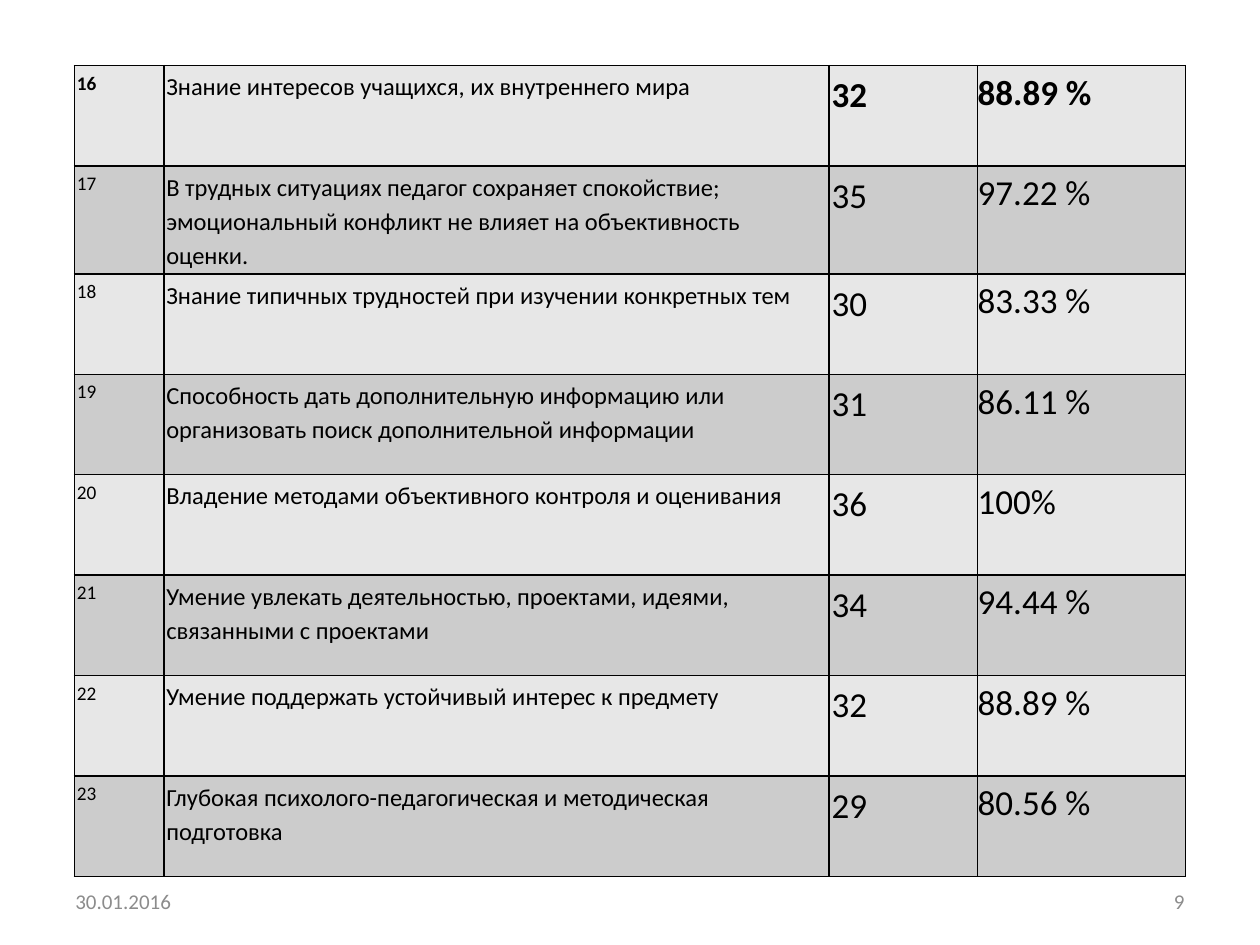
from pptx import Presentation, util as u
from pptx.dml.color import RGBColor
from pptx.enum import text
from pptx.oxml import parse_xml
from pptx.oxml.ns import nsdecls

BLACK = RGBColor(0x00, 0x00, 0x00)
GREY = RGBColor(0x8C, 0x8C, 0x8C)
BANDS = (RGBColor(0xE7, 0xE7, 0xE7), RGBColor(0xCC, 0xCC, 0xCC))
FONT = "Calibri"

COLS = (0.71, 5.28, 1.18, 1.65)
SIZES = (11, 14, 20, 20)
PADS = (0.02, 0.02, 0.02, 0)
ROWS = (
    ("16", "Знание интересов учащихся, их внутреннего мира", "32", "88.89 %"),
    ("17", "В трудных ситуациях педагог сохраняет спокойствие; "
           "эмоциональный конфликт не влияет на объективность оценки.",
     "35", "97.22 %"),
    ("18", "Знание типичных трудностей при изучении конкретных тем",
     "30", "83.33 %"),
    ("19", "Способность дать дополнительную информацию или "
           "организовать поиск дополнительной информации", "31", "86.11 %"),
    ("20", "Владение методами объективного контроля и оценивания",
     "36", "100%"),
    ("21", "Умение увлекать деятельностью, проектами, идеями, "
           "связанными с проектами", "34", "94.44 %"),
    ("22", "Умение поддержать устойчивый интерес к предмету",
     "32", "88.89 %"),
    ("23", "Глубокая психолого-педагогическая и методическая подготовка",
     "29", "80.56 %"),
)


def add_run(para, words, size, color, bold=False):
    run = para.add_run()
    run.text = words
    font = run.font
    font.name, font.size, font.bold = FONT, u.Pt(size), bold
    font.color.rgb = color


def set_edges(cell):
    props = cell._tc.get_or_add_tcPr()
    for spot, side in enumerate(("lnL", "lnR", "lnT", "lnB")):
        props.insert(spot, parse_xml(
            f'<a:{side} {nsdecls("a")} w="12700"><a:solidFill>'
            f'<a:srgbClr val="{BLACK}"/></a:solidFill></a:{side}>'))


def fill_cell(cell, words, size, pad, band, bold):
    cell.fill.solid()
    cell.fill.fore_color.rgb = band
    cell.margin_left = cell.margin_right = u.Inches(pad)
    cell.margin_top = cell.margin_bottom = u.Inches(pad)
    para = cell.text_frame.paragraphs[0]
    para.line_spacing = 1.15
    para.space_after = u.Pt(10)
    add_run(para, words, size, BLACK, bold)
    set_edges(cell)


def add_scores(slide, left, top, width, height):
    table = slide.shapes.add_table(
        len(ROWS), len(COLS), u.Inches(left), u.Inches(top),
        u.Inches(width), u.Inches(height)).table
    table.first_row = False
    table.horz_banding = False
    for col, wide in zip(table.columns, COLS):
        col.width = u.Inches(wide)
    for r, row in enumerate(ROWS):
        table.rows[r].height = u.Inches(height / len(ROWS))
        for c, words in enumerate(row):
            # The first row is bold, except for its wording
            fill_cell(table.cell(r, c), words, SIZES[c], PADS[c],
                      BANDS[r % 2], r == 0 and c != 1)


def add_footer(slide, left, top, width, height):
    wide = 2.33
    notes = (("30.01.2016", left, text.PP_ALIGN.LEFT),
             ("9", left + width - wide, text.PP_ALIGN.RIGHT))
    for words, x, align in notes:
        frame = slide.shapes.add_textbox(
            u.Inches(x), u.Inches(top), u.Inches(wide),
            u.Inches(height)).text_frame
        frame.word_wrap = True
        frame.vertical_anchor = text.MSO_ANCHOR.MIDDLE
        para = frame.paragraphs[0]
        para.alignment = align
        add_run(para, words, 12, GREY)


def main():
    deck = Presentation()
    deck.slide_width, deck.slide_height = u.Inches(10), u.Inches(7.5)
    slide = deck.slides.add_slide(deck.slide_layouts[6])
    # Table of scores
    add_scores(slide, 0.59, 0.52, sum(COLS), 6.38)
    # Date and page number
    add_footer(slide, 0.5, 6.95, 9, 0.4)
    deck.save("out.pptx")


if __name__ == "__main__":
    main()
